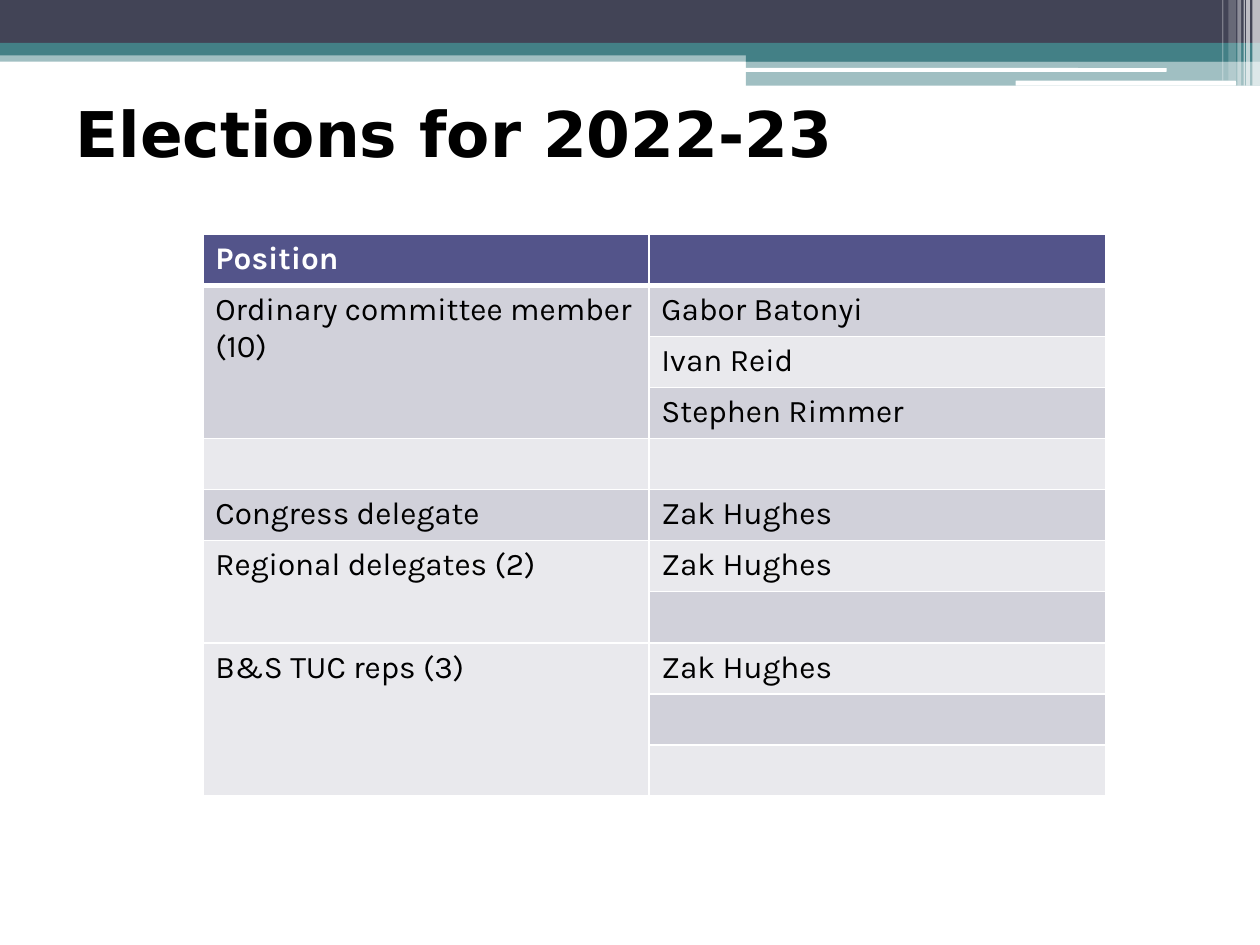
from dataclasses import dataclass
from typing import NamedTuple, Optional

from lxml import etree
from pptx import Presentation
from pptx.dml.color import RGBColor
from pptx.enum.shapes import MSO_SHAPE
from pptx.enum.text import MSO_ANCHOR, MSO_AUTO_SIZE, PP_ALIGN
from pptx.oxml.ns import qn
from pptx.util import Inches, Pt

RECT = MSO_SHAPE.RECTANGLE
ROUNDED = MSO_SHAPE.ROUNDED_RECTANGLE
MIDDLE = MSO_ANCHOR.MIDDLE
LEFT = PP_ALIGN.LEFT
NO_AUTOFIT = MSO_AUTO_SIZE.NONE
TITLE_ONLY = 5

# The slide is a grid of square units
COLUMNS, ROWS = 100, 75
UNIT = Inches(10) // COLUMNS


@dataclass(frozen=True)
class Theme:
    dark: str = "424456"
    teal: str = "438086"
    white: str = "FFFFFF"
    black: str = "000000"
    header: str = "53548A"
    bands: tuple = ("D1D1DA", "E9E9ED")
    title_font: str = "DejaVu Sans"
    title_size: int = 36
    table_font: str = "Karla"
    table_size: int = 18
    border: int = 1
    header_border: int = 3


class Bar(NamedTuple):
    left: float
    top: float
    width: float
    height: float
    color: str
    opacity: int = 100
    preset: int = RECT


class Position(NamedTuple):
    label: str
    holders: tuple


THEME = Theme()

BANNER = [
    Bar(0, 4, COLUMNS, 0.9, THEME.teal, 50),
    Bar(0, 0, COLUMNS, 3.4, THEME.dark),
    Bar(0, 3.4, COLUMNS, 1, THEME.teal),
    Bar(59.2, 3.9, 40.8, 1, THEME.teal),
    Bar(59.2, 4.8, 40.8, 2, THEME.teal, 50),
    Bar(59.1, 5.4, 33.5, 0.3, THEME.white, preset=ROUNDED),
    Bar(80.6, 6.4, 17.5, 0.4, THEME.white, preset=ROUNDED),
]
# Left, width, height and opacity of the pale stripes at the right edge
STRIPES = [
    (99.4, 0.6, 6.8, 65), (98.9, 0.3, 6.8, 65), (98.7, 0.1, 6.8, 60),
    (98.2, 0.3, 6.8, 40), (97.5, 0.6, 6.4, 20), (97, 0.1, 6.4, 30),
]

TITLE = "Elections for 2022-23"
TABLE_HEADING = "Position"
POSITIONS = [
    Position("Ordinary committee member (10)",
             ("Gabor Batonyi", "Ivan Reid", "Stephen Rimmer")),
    Position("", ("",)),
    Position("Congress delegate", ("Zak Hughes",)),
    Position("Regional delegates (2)", ("Zak Hughes", "")),
    Position("B&S TUC reps (3)", ("Zak Hughes", "", "")),
]
TABLE_LEFT, TABLE_TOP, TABLE_HEIGHT = 16.1, 18.6, 44.6
TABLE_COLUMNS = (35.4, 36.3)


def grid(units: float) -> int:
    return round(units * UNIT)


def format_font(font, values: dict, color: str) -> None:
    for name, value in values.items():
        setattr(font, name, value)
    font.color.rgb = RGBColor.from_string(color)


def draw_bar(slide, bar: Bar) -> None:
    shape = slide.shapes.add_shape(bar.preset, *map(grid, bar[:4]))
    shape.shadow.inherit = False
    shape.line.fill.background()
    shape.fill.solid()
    shape.fill.fore_color.rgb = RGBColor.from_string(bar.color)
    if bar.opacity < 100:
        color = next(shape.fill._xPr.iter(qn("a:srgbClr")))
        etree.SubElement(color, qn("a:alpha"), val=str(bar.opacity * 1000))


def draw_title(slide, text: str) -> None:
    title = slide.shapes.title
    place = {"left": 5, "top": 6.8, "width": 90, "height": 7.4}
    for name, units in place.items():
        setattr(title, name, grid(units))
    frame = title.text_frame
    frame.text = text
    frame.vertical_anchor = MIDDLE
    frame.auto_size = NO_AUTOFIT
    paragraph = frame.paragraphs[0]
    paragraph.alignment = LEFT
    format_font(paragraph.runs[0].font,
                {"name": THEME.title_font, "size": Pt(THEME.title_size), "bold": True},
                THEME.black)


def set_borders(cell, top: int, bottom: int) -> None:
    properties = cell._tc.get_or_add_tcPr()
    widths = {"lnL": THEME.border, "lnR": THEME.border, "lnT": top, "lnB": bottom}
    for side, width in widths.items():
        line = etree.SubElement(properties, qn(f"a:{side}"), w=str(Pt(width)))
        fill = etree.SubElement(line, qn("a:solidFill"))
        etree.SubElement(fill, qn("a:srgbClr"), val=THEME.white)


def fill_cell(cell, row: int, text: Optional[str]) -> None:
    is_header = row == 0
    # The heavy rule lies between the header and the first band
    set_borders(cell,
                THEME.header_border if row == 1 else THEME.border,
                THEME.header_border if is_header else THEME.border)
    cell.fill.solid()
    color = THEME.header if is_header else THEME.bands[(row - 1) % 2]
    cell.fill.fore_color.rgb = RGBColor.from_string(color)
    if text:
        cell.text = text
        format_font(cell.text_frame.paragraphs[0].runs[0].font,
                    {"name": THEME.table_font, "size": Pt(THEME.table_size),
                     "bold": is_header},
                    THEME.white if is_header else THEME.black)


def draw_elections(slide, positions: list[Position]) -> None:
    # One row for each holder, with the label only on the first of them
    rows = [(TABLE_HEADING, "")]
    spans = []
    for position in positions:
        spans.append((len(rows), len(rows) + len(position.holders) - 1))
        rows += [(position.label if i == 0 else None, holder)
                 for i, holder in enumerate(position.holders)]

    table = slide.shapes.add_table(
        len(rows), len(TABLE_COLUMNS), grid(TABLE_LEFT), grid(TABLE_TOP),
        grid(sum(TABLE_COLUMNS)), grid(TABLE_HEIGHT)).table
    for column, width in zip(table.columns, TABLE_COLUMNS):
        column.width = grid(width)
    for r, texts in enumerate(rows):
        table.rows[r].height = grid(TABLE_HEIGHT / len(rows))
        for c, text in enumerate(texts):
            fill_cell(table.cell(r, c), r, text)
    for first, last in spans:
        if last > first:
            table.cell(first, 0).merge(table.cell(last, 0))


def main() -> None:
    presentation = Presentation()
    presentation.slide_width = COLUMNS * UNIT
    presentation.slide_height = ROWS * UNIT
    slide = presentation.slides.add_slide(presentation.slide_layouts[TITLE_ONLY])

    # Banner along the top edge
    stripes = [Bar(left, 0, width, height, THEME.white, opacity)
               for left, width, height, opacity in STRIPES]
    for bar in BANNER + stripes:
        draw_bar(slide, bar)

    # Content
    draw_title(slide, TITLE)
    draw_elections(slide, POSITIONS)
    presentation.save("out.pptx")


if __name__ == "__main__":
    main()
